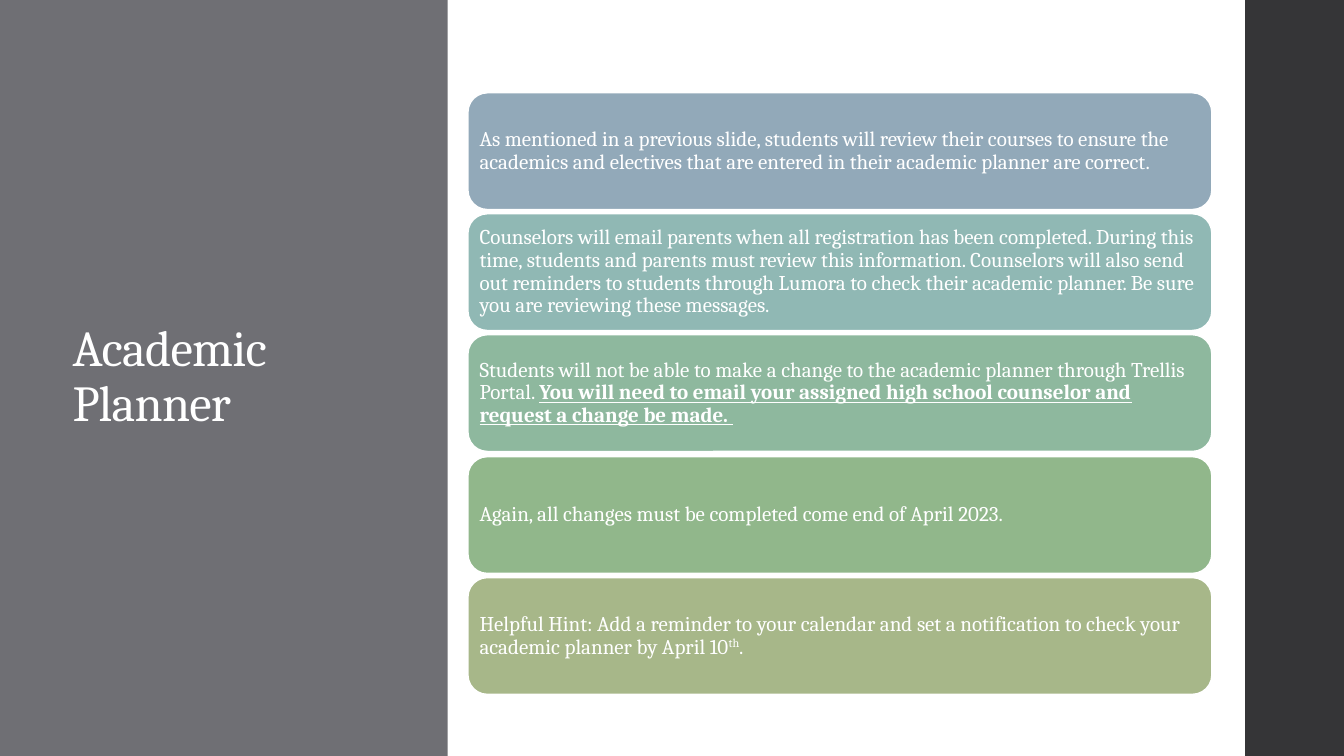
from dataclasses import dataclass

import pptx
import pptx.dml.color
import pptx.enum.shapes
import pptx.enum.text
import pptx.util


@dataclass(frozen=True)
class Theme:
    font: str = "Cambria"
    title_size: int = 36
    body_size: int = 15
    text: str = "FFFFFF"
    outline: str = "FFFFFF"
    title_panel: str = "6F6F74"
    side_bar: str = "353537"
    cards: tuple = ("92A9B9", "90B8B4", "8EB89E", "91B78B", "A7B789")


THEME = Theme()
EMU_PER_PX = 9144
SLIDE_W, SLIDE_H = 1333, 750
CARD_LEFT, CARD_TOP, CARD_W, CARD_H = 464, 92, 738, 116
CARD_PITCH = 120.25

PLAIN, STRONG, RAISED = "plain", "strong", "raised"
CARD_TEXTS = [
    [("As mentioned in a previous slide, students will review their courses to ensure the "
      "academics and electives that are entered in their academic planner are correct.", PLAIN)],
    [("Counselors will email parents when all registration has been completed. During this "
      "time, students and parents must review this information. Counselors will also send "
      "out reminders to students through Lumora to check their academic planner. Be sure "
      "you are reviewing these messages.", PLAIN)],
    [("Students will not be able to make a change to the academic planner through "
      "Trellis Portal. ", PLAIN),
     ("You will need to email your assigned high school counselor and "
      "request a change be made. ", STRONG)],
    [("Again, all changes must be completed come end of April 2023.", PLAIN)],
    [("Helpful Hint: Add a reminder to your calendar and set a notification to check your "
      "academic planner by April 10", PLAIN),
     ("th", RAISED),
     (".", PLAIN)],
]


def px(n):
    return pptx.util.Emu(n * EMU_PER_PX)


def rgb(value):
    return pptx.dml.color.RGBColor.from_string(value)


def style_run(r, size):
    r.font.name = THEME.font
    r.font.size = pptx.util.Pt(size)
    r.font.color.rgb = rgb(THEME.text)


def format_left_middle(tf):
    tf.word_wrap = True
    tf.auto_size = pptx.enum.text.MSO_AUTO_SIZE.NONE
    tf.vertical_anchor = pptx.enum.text.MSO_ANCHOR.MIDDLE
    p = tf.paragraphs[0]
    p.alignment = pptx.enum.text.PP_ALIGN.LEFT
    p.line_spacing = 0.9
    return p


def add_block(s, kind, left, top, width, height, fill):
    sp = s.shapes.add_shape(kind, px(left), px(top), px(width), px(height))
    sp.shadow.inherit = False
    sp.fill.solid()
    sp.fill.fore_color.rgb = rgb(fill)
    sp.line.fill.background()
    return sp


def add_panel(s, left, width, fill):
    add_block(s, pptx.enum.shapes.MSO_SHAPE.RECTANGLE, left, 0, width, SLIDE_H, fill)


def add_card(s, top, fill, runs):
    sp = add_block(s, pptx.enum.shapes.MSO_SHAPE.ROUNDED_RECTANGLE,
                   CARD_LEFT, top, CARD_W, CARD_H, fill)
    sp.line.color.rgb = rgb(THEME.outline)
    sp.line.width = pptx.util.Pt(1.1)
    tf = sp.text_frame
    tf.margin_left = tf.margin_right = tf.margin_top = tf.margin_bottom = px(6)
    p = format_left_middle(tf)
    for text, kind in runs:
        r = p.add_run()
        r.text = text
        style_run(r, THEME.body_size)
        if kind == STRONG:
            r.font.bold = True
            r.font.underline = True
        elif kind == RAISED:
            r._r.get_or_add_rPr().set("baseline", "30000")


def set_title(s, text):
    sp = s.shapes.title
    sp.left, sp.top, sp.width, sp.height = px(62), px(91), px(297), px(567)
    s.shapes._spTree.append(sp._element)
    sp.text_frame.text = text
    r = format_left_middle(sp.text_frame).runs[0]
    style_run(r, THEME.title_size)
    r._r.get_or_add_rPr().set("spc", "-50")


def main():
    prs = pptx.Presentation()
    prs.slide_width, prs.slide_height = px(SLIDE_W), px(SLIDE_H)
    s = prs.slides.add_slide(prs.slide_layouts.get_by_name("Title Only"))
    add_panel(s, 0, 444, THEME.title_panel)
    set_title(s, "Academic Planner")
    add_panel(s, 1235, SLIDE_W - 1235, THEME.side_bar)
    for i, (fill, runs) in enumerate(zip(THEME.cards, CARD_TEXTS)):
        add_card(s, CARD_TOP + round(i * CARD_PITCH), fill, runs)
    prs.save("out.pptx")


if __name__ == "__main__":
    main()
